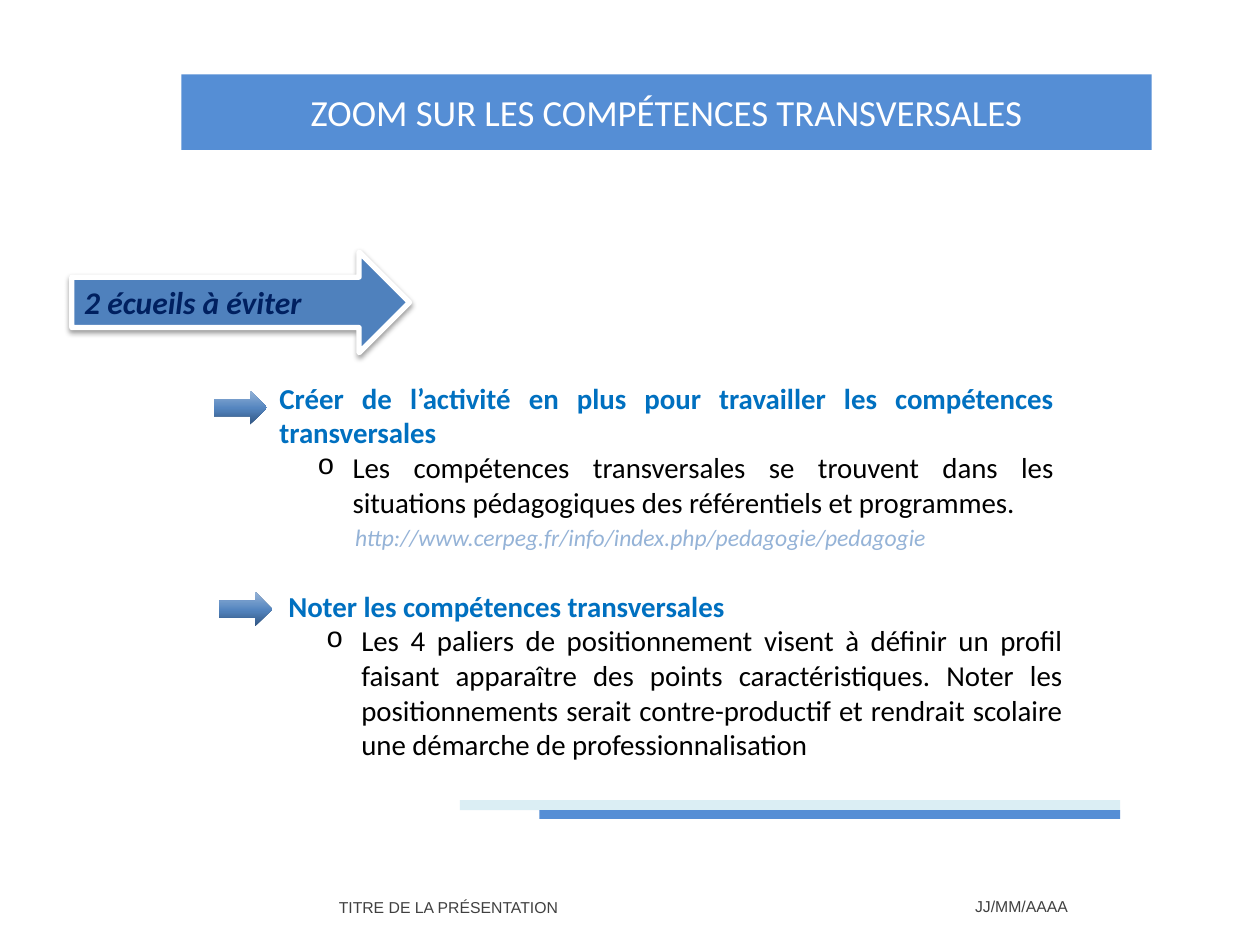
from copy import deepcopy

from lxml import etree
from pptx import Presentation
from pptx import util as u
from pptx.dml.color import RGBColor
from pptx.enum import shapes, text
from pptx.oxml import parse_xml
from pptx.oxml.ns import nsdecls, qn

RECTANGLE = shapes.MSO_SHAPE.RECTANGLE
ARROW = shapes.MSO_SHAPE.RIGHT_ARROW
JUSTIFY = text.PP_ALIGN.JUSTIFY
BLUE, PALE_BLUE = "558ED5", "DBEEF4"

deck = Presentation()
deck.slide_width, deck.slide_height = u.Inches(10), u.Inches(7.5)
page = deck.slides.add_slide(deck.slide_layouts[6])


def add_box(place, kind=None, fill=None):
    """Add a preset shape, or a text box when no kind is given; place is in inches."""
    lengths = [u.Inches(value) for value in place]
    if kind is None:
        box = page.shapes.add_textbox(*lengths)
    else:
        box = page.shapes.add_shape(kind, *lengths)
        box.shadow.inherit = False
        box.line.fill.background()
        if fill:
            box.fill.solid()
            box.fill.fore_color.rgb = RGBColor.from_string(fill)
    box.text_frame.word_wrap = True
    box.text_frame.vertical_anchor = text.MSO_ANCHOR.TOP
    return box


def write(box, words, size, color, font="Calibri", bold=False, italic=False,
          align=text.PP_ALIGN.LEFT, middle=False, bullet=None):
    """Fill the first empty paragraph of the box, or append a new one."""
    frame = box.text_frame
    para = frame.add_paragraph() if frame.text else frame.paragraphs[0]
    para.alignment = align
    if middle:
        frame.vertical_anchor = text.MSO_ANCHOR.MIDDLE
    if bullet:
        properties = para._p.get_or_add_pPr()
        properties.set("marL", str(u.Inches(0.58)))
        properties.set("indent", str(u.Inches(-0.28)))
        etree.SubElement(properties, qn("a:buFont"), typeface="Courier New")
        etree.SubElement(properties, qn("a:buChar"), char=bullet)
    span = para.add_run()
    span.text = words
    span.font.name, span.font.size = font, u.Pt(size)
    span.font.bold, span.font.italic = bold, italic
    span.font.color.rgb = RGBColor.from_string(color)


# Footer
footer = add_box((2.59, 6.72, 3.88, 0.74))
footer.text_frame.margin_top = u.Inches(0.27)
write(footer, "TITRE DE LA PRÉSENTATION", 9, "404040", font="Arial", middle=True)
date = add_box((7.64, 6.99, 1.27, 0.4))
write(date, "JJ/MM/AAAA", 9, "404040", font="Arial", middle=True)

# Heading arrow with a soft shadow
heading = add_box((0.57, 2, 2.68, 0.8), ARROW, "4F81BD")
heading.line.color.rgb = RGBColor.from_string("FFFFFF")
heading.line.width = u.Pt(3)
effects = heading._element.spPr.find(qn("a:effectLst"))
effects.append(parse_xml(
    f'<a:outerShdw {nsdecls("a")} blurRad="{u.Pt(3.1)}" dist="{u.Pt(1.6)}" '
    'dir="5400000" rotWithShape="0"><a:srgbClr val="000000">'
    '<a:alpha val="38000"/></a:srgbClr></a:outerShdw>'))
write(heading, "2 écueils à éviter", 18, "002060", bold=True, italic=True, align=JUSTIFY)

# The two pitfalls, each with its marker arrow
pitfalls = [
    ((2.12, 2.97), (1.7, 3.1),
     "Créer de l’activité en plus pour travailler les compétences transversales",
     "Les compétences transversales se trouvent dans les situations pédagogiques "
     "des référentiels et programmes."),
    ((2.19, 4.62), (1.74, 4.7),
     "Noter les compétences transversales",
     "Les 4 paliers de positionnement visent à définir un profil faisant apparaître "
     "des points caractéristiques. Noter les positionnements serait contre-productif "
     "et rendrait scolaire une démarche de professionnalisation"),
]
marker_stops = [(0, "315683"), (0.48, "5485BF"), (1, "95B3D7")]
for corner, marker_corner, title, advice in pitfalls:
    panel = add_box((*corner, 6.34, 1.49), RECTANGLE, "FFFFFF")
    write(panel, title, 16.5, "0070C0", bold=True, align=JUSTIFY)
    write(panel, advice, 16.5, "000000", align=JUSTIFY, bullet="o")

    marker = add_box((*marker_corner, 0.42, 0.27), ARROW)
    marker.fill.gradient()
    marker.fill.gradient_angle = 90
    stop_list = marker._element.spPr.find(".//" + qn("a:gsLst"))
    stop_list.append(deepcopy(stop_list[0]))
    for stop, (position, color) in zip(marker.fill.gradient_stops, marker_stops):
        stop.position = position
        stop.color.rgb = RGBColor.from_string(color)

link = add_box((2.72, 4.1, 5.75, 0.33))
write(link, "http://www.cerpeg.fr/info/index.php/pedagogie/pedagogie", 13.5, "95B3D7",
      italic=True)

# Decorative bars and title banner
add_box((3.65, 6.35, 5.24, 0.08), RECTANGLE, PALE_BLUE)
add_box((4.28, 6.43, 4.61, 0.07), RECTANGLE, BLUE)
banner = add_box((1.44, 0.59, 7.7, 0.6), RECTANGLE, BLUE)
write(banner, "ZOOM SUR LES COMPÉTENCES TRANSVERSALES", 21, "FFFFFF",
      align=text.PP_ALIGN.CENTER, middle=True)

deck.save("out.pptx")
